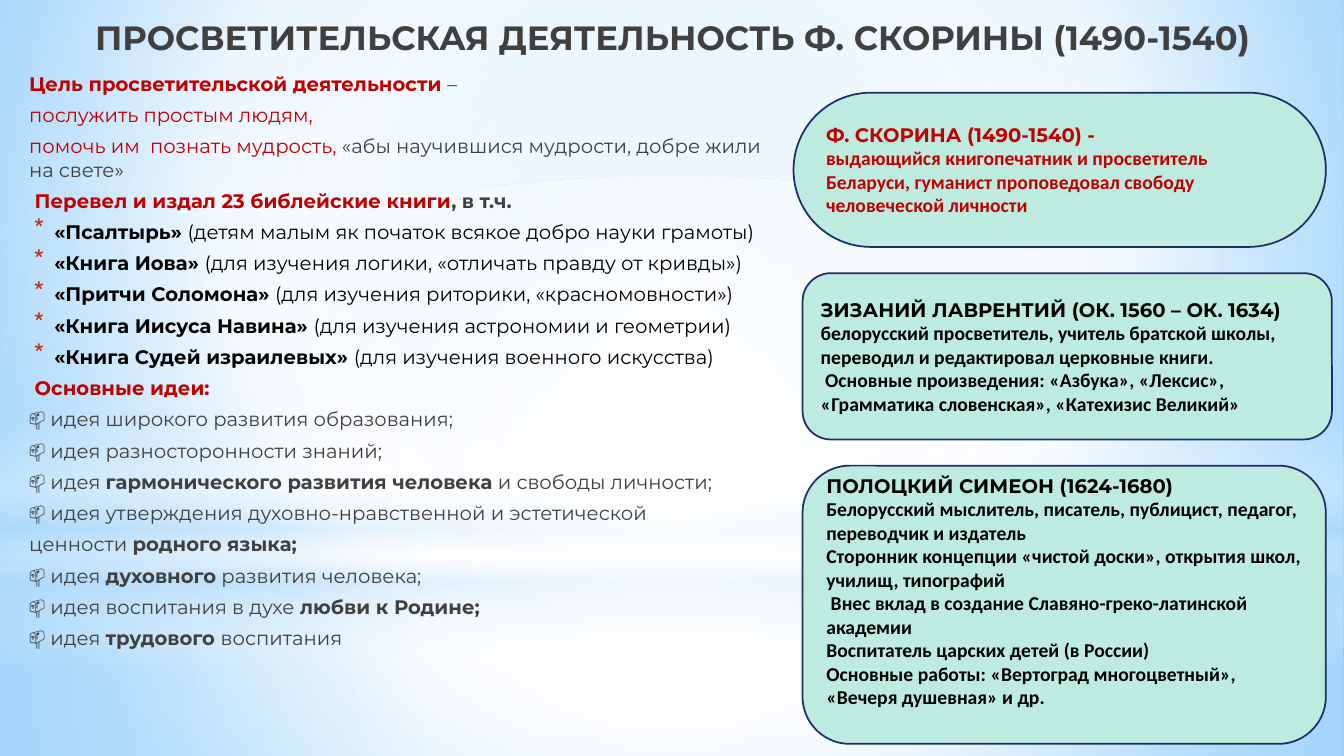
import pptx
import pptx.util
import pptx.dml.color
import pptx.enum.shapes
import pptx.enum.text
import pptx.oxml
import pptx.oxml.ns

Inches = pptx.util.Inches
Pt = pptx.util.Pt
RGB = pptx.dml.color.RGBColor
KIND = pptx.enum.shapes.MSO_SHAPE
ANCHOR = pptx.enum.text.MSO_ANCHOR
ALIGN = pptx.enum.text.PP_ALIGN
NS = pptx.oxml.ns.nsdecls("a")

RED = RGB(0xC0, 0x00, 0x00)
GREY = RGB(0x40, 0x40, 0x40)
BLACK = RGB(0x00, 0x00, 0x00)
MINT = RGB(0xBE, 0xEB, 0xDF)
NAVY = RGB(0x1F, 0x2E, 0x69)
MAIN = "Montserrat"
SIDE = "Calibri"


def shade(root, stops, focus):
    marks = "".join(
        f'<a:gs pos="{pos * 1000}"><a:srgbClr val="{tint}">'
        f'<a:alpha val="{alpha * 1000}"/></a:srgbClr></a:gs>'
        for pos, tint, alpha in stops)
    if focus:
        left, top, right, low = [side * 1000 for side in focus]
        way = (f'<a:path path="circle"><a:fillToRect l="{left}" t="{top}" '
               f'r="{right}" b="{low}"/></a:path>')
    else:
        way = '<a:lin ang="5400000" scaled="0"/>'
    old = next(root.iter(pptx.oxml.ns.qn("a:gradFill")))
    new = pptx.oxml.parse_xml(
        f'<a:gradFill {NS} rotWithShape="1"><a:gsLst>{marks}</a:gsLst>{way}</a:gradFill>')
    old.getparent().replace(old, new)


def write(frame, paras, size=14, before=0, after=0, align=ALIGN.LEFT):
    frame.word_wrap = True
    for row, runs in enumerate(paras):
        para = frame.paragraphs[0] if row == 0 else frame.add_paragraph()
        form = {"alignment": align, "space_before": Pt(before), "space_after": Pt(after)}
        for key, value in form.items():
            setattr(para, key, value)
        for text, tint, bold, face in runs:
            run = para.add_run()
            run.text = text
            run.font.color.rgb = tint
            for key, value in {"size": Pt(size), "name": face, "bold": bold}.items():
                setattr(run.font, key, value)


deck = pptx.Presentation()
deck.slide_width = Inches(13.33)
deck.slide_height = Inches(7.5)
slide = deck.slides.add_slide(deck.slide_layouts[6])

slide.background.fill.gradient()
shade(slide.element, [(0, "9ED5FF", 100), (60, "FFFFFF", 100), (100, "5BB9FF", 100)],
      (20, 10, 20, 60))

MID = (50, 50, 50, 50)
glows = [
    (KIND.RECTANGLE, 5.58, 1.92, MID,
     [(0, "FFFFFF", 91), (37, "FFFFFF", 76), (100, "B4DCFA", 79)]),
    (KIND.RECTANGLE, 0, 5.58, MID,
     [(0, "FFFFFF", 89), (48, "FFFFFF", 62), (100, "B4DCFA", 79)]),
    (KIND.RECTANGLE, 4.12, 2.5, None,
     [(0, "FFFFFF", 0), (29, "FFFFFF", 30), (45, "B4DCFA", 40),
      (55, "FFFFFF", 26), (65, "B4DCFA", 60), (100, "FFFFFF", 0)]),
    (KIND.OVAL, 1.75, 5.58, MID, [(0, "FFFFFF", 100), (56, "FFFFFF", 0)]),
]
for kind, top, high, focus, stops in glows:
    glow = slide.shapes.add_shape(kind, 0, Inches(top), Inches(13.33), Inches(high))
    glow.shadow.inherit = False
    glow.line.fill.background()
    glow.fill.gradient()
    shade(glow.element, stops, focus)

title = slide.shapes.add_textbox(Inches(0.19), Inches(0.12), Inches(12.96), Inches(0.79))
head = "ПРОСВЕТИТЕЛЬСКАЯ ДЕЯТЕЛЬНОСТЬ Ф. СКОРИНЫ (1490-1540)"
write(title.text_frame, [[(head, GREY, True, MAIN)]], 24, align=ALIGN.CENTER)

books = [
    ("«Псалтырь» ", "(детям малым як початок всякое добро науки грамоты)"),
    ("«Книга Иова» ", "(для изучения логики, «отличать правду от кривды»)"),
    ("«Притчи Соломона» ", "(для изучения риторики, «красномовности»)"),
    ("«Книга Иисуса Навина» ", "(для изучения астрономии и геометрии)"),
    ("«Книга Судей израилевых» ", "(для изучения военного искусства)"),
]
ideas = [
    ("📫 идея широкого развития образования;",),
    ("📫 идея разносторонности знаний;",),
    ("📫 идея ", "гармонического развития человека", " и свободы личности;"),
    ("📫 идея утверждения духовно-нравственной и эстетической",),
    ("ценности ", "родного языка;"),
    ("📫 идея ", "духовного", " развития человека;"),
    ("📫 идея воспитания в духе ", "любви к Родине;"),
    ("📫 идея ", "трудового ", "воспитания"),
]
intro = [
    [("Цель просветительской деятельности ", RED, True, MAIN), ("–", GREY, False, MAIN)],
    [("послужить простым людям,", RED, False, MAIN)],
    [("помочь им  познать мудрость,", RED, False, MAIN),
     (" «абы научившися мудрости, добре жили на свете»", GREY, False, MAIN)],
    [(" Перевел и издал 23 библейские книги", RED, True, MAIN),
     (", в т.ч.", GREY, True, MAIN)],
]
works = [[(name, BLACK, True, MAIN), (use, BLACK, False, MAIN)] for name, use in books]
label = [[(" Основные идеи:", RED, True, MAIN)]]
goals = [[(text, GREY, spot == 1, MAIN) for spot, text in enumerate(parts)]
         for parts in ideas]

body = slide.shapes.add_textbox(Inches(0.19), Inches(0.66), Inches(7.68), Inches(5.83))
write(body.text_frame, intro + works + label + goals, before=2.5, after=3)
first = len(intro)
for para in body.text_frame.paragraphs[first:first + len(books)]:
    props = para.runs[0].font and para._p.get_or_add_pPr()
    props.set("marL", str(Inches(0.25)))
    props.set("indent", str(Inches(-0.2)))
    for mark in ('<a:buClr {}><a:srgbClr val="C3260C"/></a:buClr>',
                 '<a:buSzPct {} val="130000"/>', '<a:buChar {} char="*"/>'):
        props.append(pptx.oxml.parse_xml(mark.format(NS)))

cards = [
    (7.87, 0.92, 5.28, 1.53, 0.5, 0.05, RED, [
        "Ф. СКОРИНА (1490-1540) -",
        "выдающийся книгопечатник и просветитель Беларуси, гуманист проповедовал "
        "свободу человеческой личности"]),
    (7.96, 2.71, 5.25, 1.65, 0.17, 0.05, BLACK, [
        "ЗИЗАНИЙ ЛАВРЕНТИЙ (ОК. 1560 – ОК. 1634)",
        "белорусский просветитель, учитель братской школы, переводил и редактировал "
        "церковные книги.",
        " Основные произведения: «Азбука», «Лексис», «Грамматика словенская», "
        "«Катехизис Великий»"]),
    (7.96, 4.62, 5.19, 2.76, 0.17, 0.32, BLACK, [
        "ПОЛОЦКИЙ СИМЕОН (1624-1680)",
        "Белорусский мыслитель, писатель, публицист, педагог, переводчик и издатель",
        "Сторонник концепции «чистой доски», открытия школ, училищ, типографий",
        " Внес вклад в создание Славяно-греко-латинской академии",
        "Воспитатель царских детей (в России)",
        "Основные работы: «Вертоград многоцветный», «Вечеря душевная» и др."]),
]
for left, top, wide, high, bend, low, tint, lines in cards:
    card = slide.shapes.add_shape(KIND.ROUNDED_RECTANGLE, Inches(left), Inches(top),
                                  Inches(wide), Inches(high))
    card.adjustments[0] = bend
    card.shadow.inherit = False
    card.fill.solid()
    card.fill.fore_color.rgb = MINT
    card.line.color.rgb = NAVY
    card.line.width = Pt(1.25)
    frame = card.text_frame
    frame.vertical_anchor = ANCHOR.MIDDLE
    frame.margin_bottom = Inches(low)
    write(frame, [[(text, tint, True, SIDE if row else MAIN)]
                  for row, text in enumerate(lines)])

deck.save("out.pptx")
